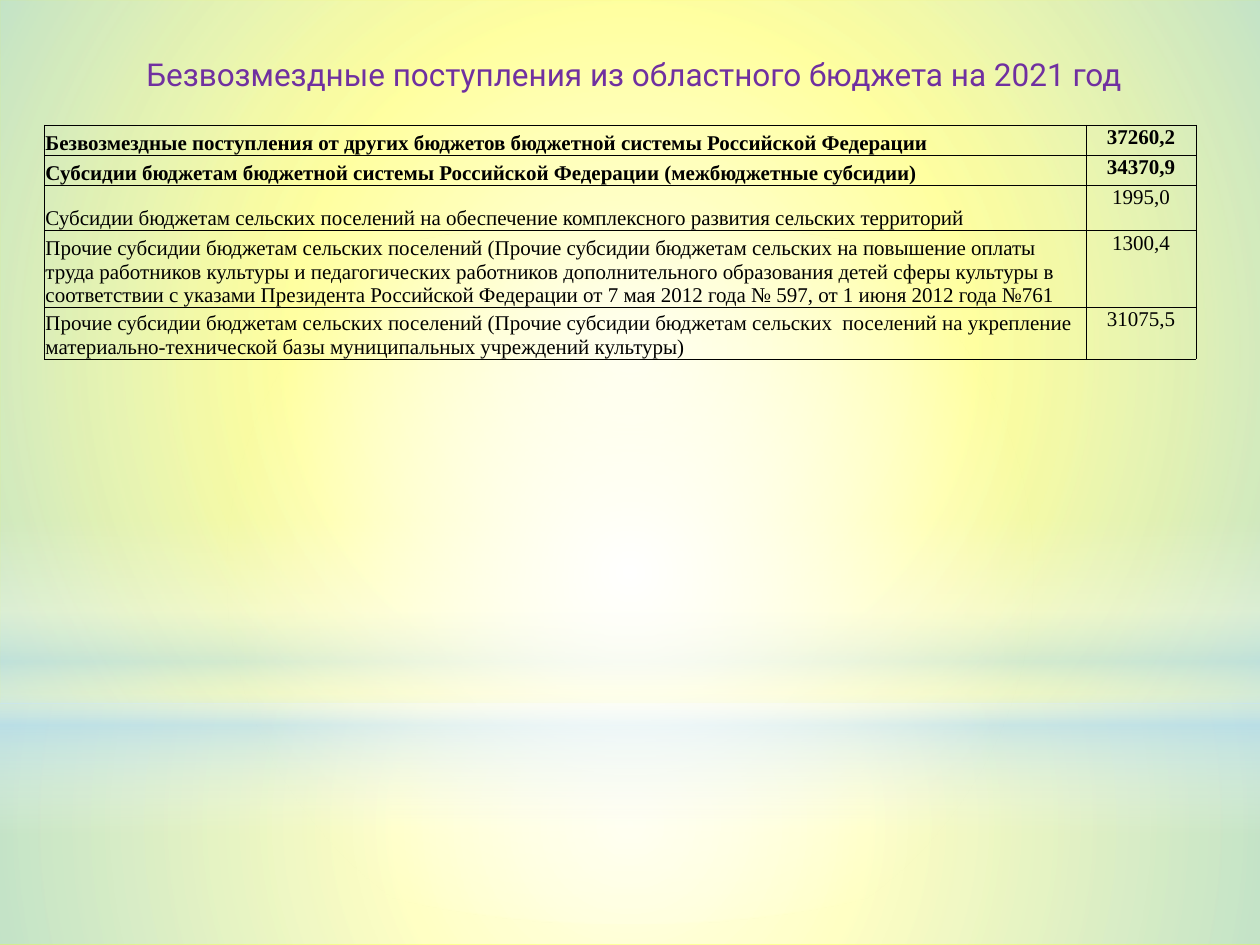
import dataclasses

import pptx
import pptx.dml.color
import pptx.enum.shapes
import pptx.enum.text
import pptx.oxml
import pptx.oxml.ns
import pptx.util

Pt = pptx.util.Pt
SHAPES = pptx.enum.shapes.MSO_SHAPE
ALIGN = pptx.enum.text.PP_ALIGN
ANCHOR = pptx.enum.text.MSO_ANCHOR


@dataclasses.dataclass(frozen=True)
class Theme:
    page: str = "FFFF00"
    white: str = "FFFFFF"
    sky: str = "B4DCFA"
    title: str = "7030A0"
    ink: str = "000000"
    title_font: str = "Roboto"
    table_font: str = "Times New Roman"
    title_size: float = 18
    table_size: float = 12
    border: float = 0.23


THEME = Theme()
RADIAL = ('<a:path path="circle"><a:fillToRect l="50000" t="50000" '
          'r="50000" b="50000"/></a:path>')
VERTICAL = '<a:lin ang="5400000" scaled="0"/>'

# Each glow: preset, box, direction, stops of (position %, colour, opacity %)
GLOWS = [
    (SHAPES.RECTANGLE, (0, 402, 720, 138), RADIAL,
     [(0, THEME.white, 91), (37, THEME.white, 76), (100, THEME.sky, 79)]),
    (SHAPES.RECTANGLE, (0, 0, 720, 402), RADIAL,
     [(0, THEME.white, 89), (48, THEME.white, 62), (100, THEME.sky, 79)]),
    (SHAPES.RECTANGLE, (0, 297, 720, 180), VERTICAL,
     [(0, THEME.white, 0), (29, THEME.white, 30), (45, THEME.sky, 40),
      (55, THEME.white, 26), (65, THEME.sky, 60), (100, THEME.white, 0)]),
    (SHAPES.OVAL, (0, 126, 720, 402), RADIAL,
     [(0, THEME.white, 100), (56, THEME.white, 0)]),
]

TITLE = "Безвозмездные поступления из областного бюджета на 2021 год"

# Each row: height, bold, description, amount
ROWS = [
    (17.1, True, "Безвозмездные поступления от других бюджетов бюджетной "
     "системы Российской Федерации", "37260,2"),
    (17.1, True, "Субсидии бюджетам бюджетной системы Российской Федерации "
     "(межбюджетные субсидии)", "34370,9"),
    (25.9, False, "Субсидии бюджетам сельских поселений на обеспечение "
     "комплексного развития сельских территорий", "1995,0"),
    (43.5, False, "Прочие субсидии бюджетам сельских поселений (Прочие "
     "субсидии бюджетам сельских на повышение оплаты труда работников "
     "культуры и педагогических работников дополнительного образования детей "
     "сферы культуры в соответствии с указами Президента Российской Федерации "
     "от 7 мая 2012 года № 597, от 1 июня 2012 года №761", "1300,4"),
    (29.6, False, "Прочие субсидии бюджетам сельских поселений (Прочие "
     "субсидии бюджетам сельских  поселений на укрепление "
     "материально-технической базы муниципальных учреждений культуры)",
     "31075,5"),
]
AMOUNT_WIDTH = 62.5


def drawing_xml(xml):
    """Parse one element of the drawing namespace."""
    namespace = pptx.oxml.ns.nsdecls("a")
    return pptx.oxml.parse_xml(xml.replace(">", f" {namespace}>", 1))


def add_span(para, text, font, size, color, bold=False):
    span = para.add_run()
    span.text = text
    span.font.name = font
    span.font.size = Pt(size)
    span.font.bold = bold
    span.font.color.rgb = pptx.dml.color.RGBColor.from_string(color)


def add_glow(page, preset, box, direction, stops):
    shape = page.shapes.add_shape(preset, *map(Pt, box))
    shape.shadow.inherit = False
    shape.line.fill.background()
    shape.fill.background()
    stop_xml = "".join(
        f'<a:gs pos="{position * 1000}"><a:srgbClr val="{color}">'
        f'<a:alpha val="{opacity * 1000}"/></a:srgbClr></a:gs>'
        for position, color, opacity in stops)
    gradient = drawing_xml('<a:gradFill rotWithShape="1">'
                           f"<a:gsLst>{stop_xml}</a:gsLst>{direction}</a:gradFill>")
    properties = shape.element.spPr
    properties.replace(properties.find(pptx.oxml.ns.qn("a:noFill")), gradient)


def add_background(page):
    fill = page.background.fill
    fill.solid()
    fill.fore_color.rgb = pptx.dml.color.RGBColor.from_string(THEME.page)
    for glow in GLOWS:
        add_glow(page, *glow)


def add_title(page, box):
    frame = page.shapes.add_textbox(*map(Pt, box)).text_frame
    frame.word_wrap = True
    frame.auto_size = pptx.enum.text.MSO_AUTO_SIZE.SHAPE_TO_FIT_TEXT
    frame.vertical_anchor = ANCHOR.MIDDLE
    add_span(frame.paragraphs[0], TITLE, THEME.title_font, THEME.title_size,
             THEME.title)


def fill_cell(cell, text, bold, align, anchor):
    cell.margin_left = cell.margin_right = cell.margin_top = Pt(0.7)
    cell.margin_bottom = 0
    cell.vertical_anchor = anchor
    para = cell.text_frame.paragraphs[0]
    para.alignment = align
    add_span(para, text, THEME.table_font, THEME.table_size, THEME.ink, bold)
    properties = cell._tc.get_or_add_tcPr()
    for side in "LRTB":
        properties.append(drawing_xml(
            f'<a:ln{side} w="{int(Pt(THEME.border))}"><a:solidFill>'
            f'<a:srgbClr val="{THEME.ink}"/></a:solidFill></a:ln{side}>'))
    cell.fill.background()


def add_budget_table(page, box):
    left, top, width = box
    height = sum(row[0] for row in ROWS)
    table = page.shapes.add_table(len(ROWS), 2, Pt(left), Pt(top), Pt(width),
                                  Pt(height)).table
    table.first_row = table.horz_banding = False
    table.columns[0].width = Pt(width - AMOUNT_WIDTH)
    table.columns[1].width = Pt(AMOUNT_WIDTH)
    for index, (row_height, bold, description, amount) in enumerate(ROWS):
        table.rows[index].height = Pt(row_height)
        fill_cell(table.cell(index, 0), description, bold, ALIGN.LEFT,
                  ANCHOR.BOTTOM)
        fill_cell(table.cell(index, 1), amount, bold, ALIGN.CENTER, ANCHOR.TOP)


def main():
    deck = pptx.Presentation()
    deck.slide_width, deck.slide_height = Pt(720), Pt(540)
    page = deck.slides.add_slide(deck.slide_layouts[6])
    add_background(page)
    add_title(page, (76.5, 27.5, 572.5, 29))
    add_budget_table(page, (25.3, 71.5, 658))
    deck.save("out.pptx")


if __name__ == "__main__":
    main()
